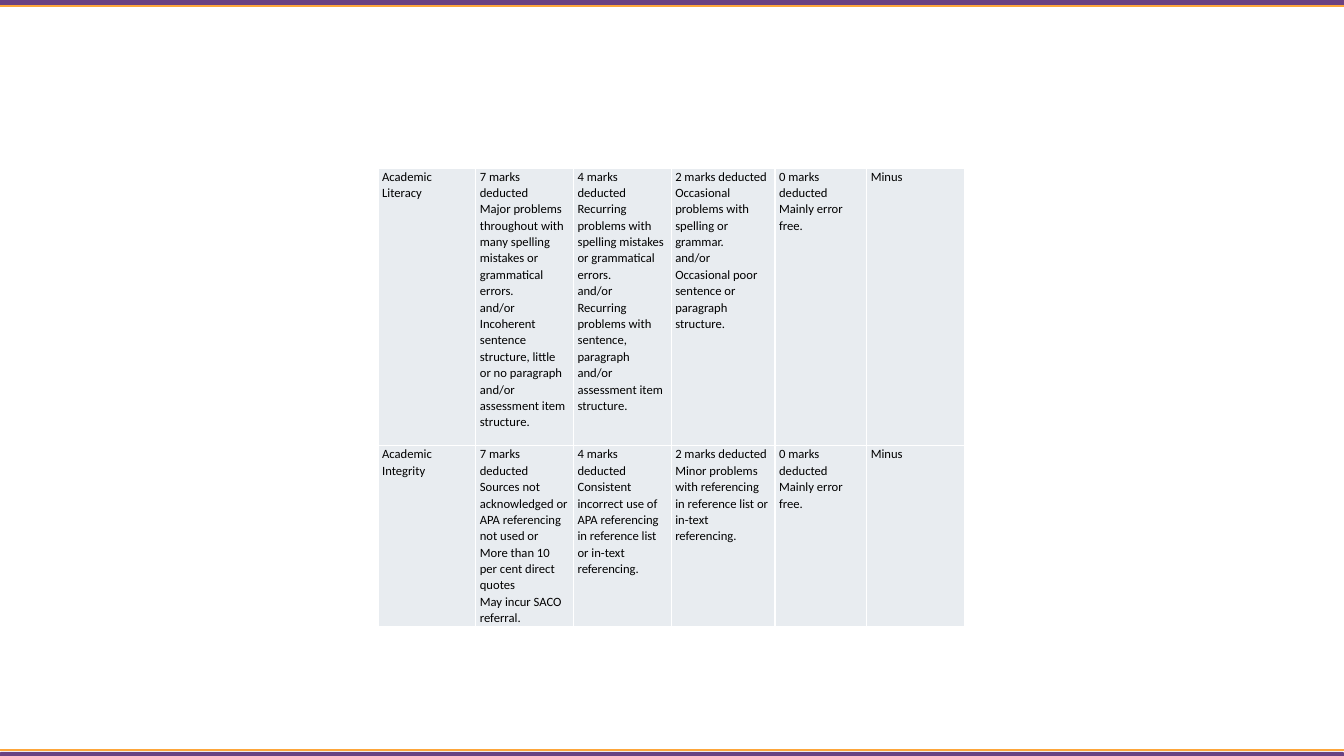
from lxml import etree
from pptx import Presentation
from pptx.dml.color import RGBColor
from pptx.enum.shapes import MSO_CONNECTOR, MSO_SHAPE
from pptx.oxml.ns import qn
from pptx.util import Pt

STRAIGHT = MSO_CONNECTOR.STRAIGHT
BAND = MSO_SHAPE.ROUND_2_SAME_RECTANGLE
PURPLE = RGBColor(0x6A, 0x41, 0x81)
ORANGE = RGBColor(0xFD, 0xA6, 0x3A)
CELL_GREY = RGBColor(0xE8, 0xEC, 0xF0)
BLACK = RGBColor(0, 0, 0)
WIDTH, HEIGHT = 960, 540

COLUMN_WIDTHS = [69.8, 69.8, 69.8, 74.2, 65.5, 69.8]
ROW_HEIGHTS = [198.5, 128.5]
# One list of paragraphs per cell
RUBRIC = [
    [
        ["Academic Literacy"],
        ["7 marks deducted",
         "Major problems throughout with many spelling mistakes or grammatical errors.",
         "and/or",
         "Incoherent sentence structure, little or no paragraph and/or assessment item structure."],
        ["4 marks deducted",
         "Recurring problems with spelling mistakes or grammatical errors.",
         "and/or",
         "Recurring problems with sentence, paragraph and/or assessment item structure."],
        ["2 marks deducted",
         "Occasional problems with spelling or grammar.",
         "and/or",
         "Occasional poor sentence or paragraph structure."],
        ["0 marks deducted", "Mainly error free."],
        ["Minus"],
    ],
    [
        ["Academic Integrity"],
        ["7 marks deducted",
         "Sources not acknowledged or",
         "APA referencing not used or",
         "More than 10 per cent direct quotes",
         "May incur SACO referral."],
        ["4 marks deducted",
         "Consistent incorrect use of APA referencing in reference list or in-text referencing."],
        ["2 marks deducted",
         "Minor problems with referencing in reference list or in-text referencing."],
        ["0 marks deducted", "Mainly error free."],
        ["Minus"],
    ],
]


def add_white_borders(cell):
    properties = cell._tc.get_or_add_tcPr()
    for position, side in enumerate(("a:lnL", "a:lnR", "a:lnT", "a:lnB")):
        border = etree.Element(qn(side), w=str(Pt(1)))
        fill = etree.SubElement(border, qn("a:solidFill"))
        etree.SubElement(fill, qn("a:srgbClr"), val="FFFFFF")
        properties.insert(position, border)


presentation = Presentation()
presentation.slide_width, presentation.slide_height = Pt(WIDTH), Pt(HEIGHT)
slide = presentation.slides.add_slide(presentation.slide_layouts[6])

# Purple bands with orange rules at the bottom and top edges
for band_top, band_height, rule_y in ((537, 6.5, 535.7), (-0.7, 4.5, 4.3)):
    band = slide.shapes.add_shape(BAND, Pt(0), Pt(band_top), Pt(WIDTH), Pt(band_height))
    band.shadow.inherit = False
    band.fill.solid()
    band.fill.fore_color.rgb = PURPLE
    band.line.fill.background()
    rule = slide.shapes.add_connector(STRAIGHT, Pt(0), Pt(rule_y), Pt(WIDTH), Pt(rule_y))
    rule.line.color.rgb = ORANGE
    rule.line.width = Pt(1)
    etree.SubElement(rule._element.spPr, qn("a:effectLst"))

# Rubric table
table = slide.shapes.add_table(
    len(ROW_HEIGHTS), len(COLUMN_WIDTHS), Pt(270), Pt(120),
    Pt(sum(COLUMN_WIDTHS)), Pt(sum(ROW_HEIGHTS))).table
table.first_row = False
table.horz_banding = False
for column, width in zip(table.columns, COLUMN_WIDTHS):
    column.width = Pt(width)

for row, height, row_texts in zip(table.rows, ROW_HEIGHTS, RUBRIC):
    row.height = Pt(height)
    for cell, lines in zip(row.cells, row_texts):
        cell.margin_left = cell.margin_right = Pt(3)
        cell.margin_top = cell.margin_bottom = Pt(0)
        cell.fill.solid()
        cell.fill.fore_color.rgb = CELL_GREY
        add_white_borders(cell)
        cell.text = "\n".join(lines)
        for paragraph in cell.text_frame.paragraphs:
            paragraph.line_spacing = 1.07
            paragraph.font.name = "Calibri"
            paragraph.font.size = Pt(9)
            paragraph.font.color.rgb = BLACK

presentation.save("out.pptx")
